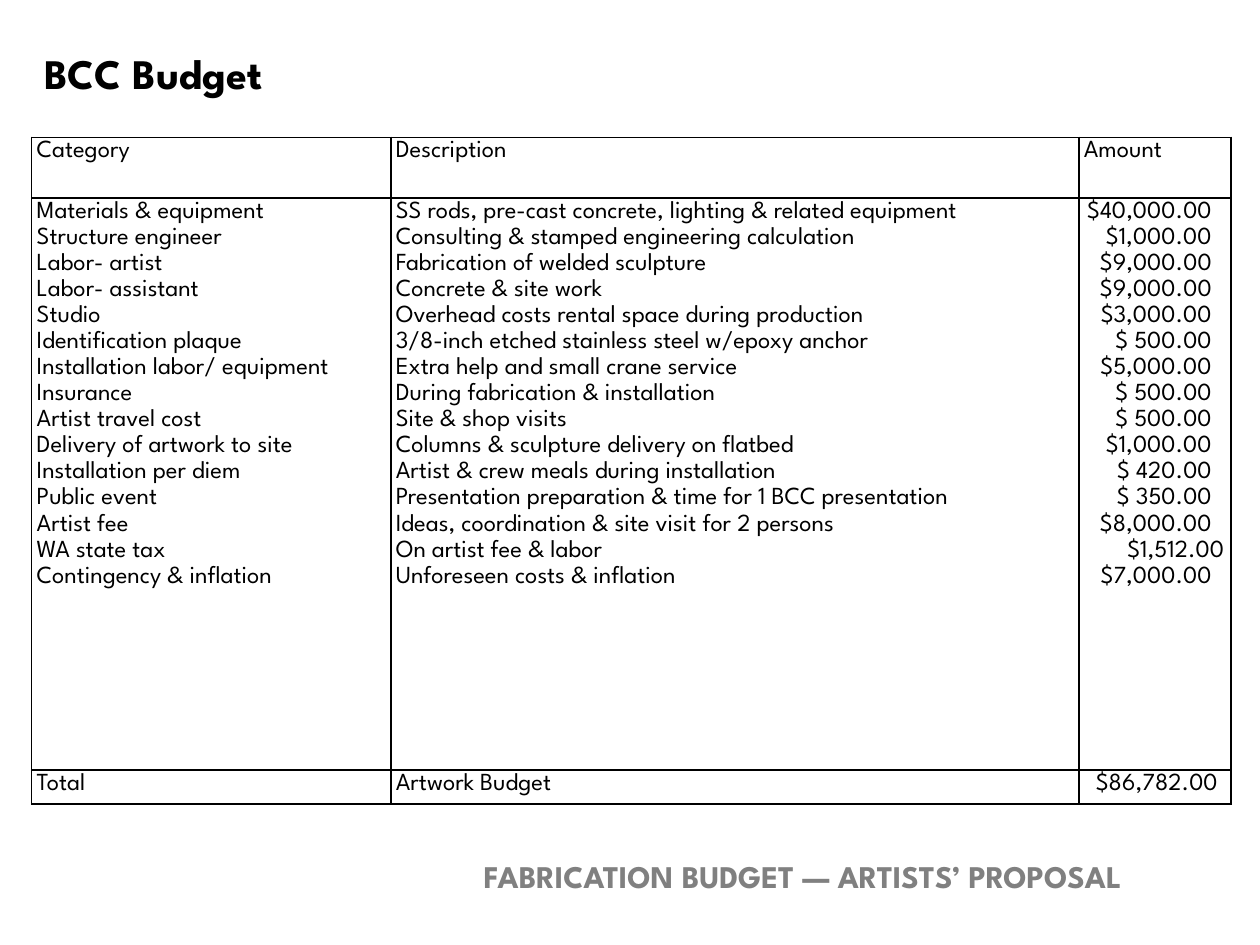
from dataclasses import dataclass

from lxml import etree
from pptx import Presentation
from pptx.dml.color import RGBColor
from pptx.enum.text import MSO_ANCHOR, MSO_AUTO_SIZE, PP_ALIGN
from pptx.oxml.ns import qn
from pptx.util import Cm, Pt

LEFT, RIGHT = PP_ALIGN.LEFT, PP_ALIGN.RIGHT
MIDDLE, TOP = MSO_ANCHOR.MIDDLE, MSO_ANCHOR.TOP
GROW = MSO_AUTO_SIZE.SHAPE_TO_FIT_TEXT
FONT = "League Spartan"
BLACK, GRAY, WHITE = "000000", "808080", "FFFFFF"
COLUMN_WIDTHS = (7.24, 13.87, 3.07)
ROW_HEIGHTS = (1.22, 11.53, 0.69)
CELL_MARGIN = 0.1


@dataclass
class Item:
    category: str
    description: str
    amount: str
    amount_end: float = 2.58


@dataclass
class Label:
    text: str
    left: float
    top: float
    width: float
    height: float
    size: int
    color: str
    align: PP_ALIGN = LEFT
    anchor: MSO_ANCHOR = TOP
    wrap: bool = True


HEADER = [Item("Category", "Description", "Amount", 0)]
ITEMS = [
    Item("Materials & equipment", "SS rods, pre-cast concrete, lighting & related equipment", "$40,000.00"),
    Item("Structure engineer", "Consulting & stamped engineering calculation", "$1,000.00"),
    Item("Labor- artist", "Fabrication of welded sculpture", "$9,000.00"),
    Item("Labor- assistant", "Concrete & site work", "$9,000.00"),
    Item("Studio", "Overhead costs rental space during production", "$3,000.00"),
    Item("Identification plaque", "3/8-inch etched stainless steel w/epoxy anchor", "$ 500.00"),
    Item("Installation labor/ equipment", "Extra help and small crane service", "$5,000.00"),
    Item("Insurance", "During fabrication & installation", "$ 500.00"),
    Item("Artist travel cost", "Site & shop visits", "$ 500.00"),
    Item("Delivery of artwork to site", "Columns & sculpture delivery on flatbed", "$1,000.00"),
    Item("Installation per diem", "Artist & crew meals during installation", "$ 420.00"),
    Item("Public event", "Presentation preparation & time for 1 BCC presentation", "$ 350.00"),
    Item("Artist fee", "Ideas, coordination & site visit for 2 persons", "$8,000.00"),
    Item("WA state tax", "On artist fee & labor", "$1,512.00", 2.83),
    Item("Contingency & inflation", "Unforeseen costs & inflation", "$7,000.00"),
]
TOTAL = [Item("Total", "Artwork Budget", "$86,782.00", 2.7)]

LABELS = [
    Label("BCC Budget", 0.64, 0.84, 5.77, 1.27, 24, BLACK, anchor=MIDDLE, wrap=False),
    Label("FABRICATION BUDGET — ARTISTS’ PROPOSAL", 4.45, 17.15, 18.42, 1.02, 18, GRAY, align=RIGHT),
]


def rgb(color: str) -> RGBColor:
    return RGBColor.from_string(color)


def set_font(paragraph, size: int, color: str, bold: bool = False) -> None:
    font = paragraph.font
    font.name = FONT
    font.size = Pt(size)
    font.bold = bold
    font.color.rgb = rgb(color)


def add_right_tab(paragraph, position: float) -> None:
    properties = paragraph._p.get_or_add_pPr()
    tabs = etree.SubElement(properties, qn("a:tabLst"))
    etree.SubElement(tabs, qn("a:tab"), pos=str(Cm(position)), algn="r")


def add_borders(cell) -> None:
    properties = cell._tc.get_or_add_tcPr()
    for side in ("lnL", "lnR", "lnT", "lnB"):
        line = etree.SubElement(properties, qn(f"a:{side}"), w=str(Pt(1)))
        fill = etree.SubElement(line, qn("a:solidFill"))
        etree.SubElement(fill, qn("a:srgbClr"), val=BLACK)


def fill_cell(cell, entries: list[tuple[str, float]]) -> None:
    add_borders(cell)
    cell.fill.solid()
    cell.fill.fore_color.rgb = rgb(WHITE)
    cell.margin_left = cell.margin_right = Cm(CELL_MARGIN)
    cell.margin_top = cell.margin_bottom = Cm(0)
    frame = cell.text_frame
    for index, (text, tab) in enumerate(entries):
        paragraph = frame.add_paragraph() if index else frame.paragraphs[0]
        if tab:
            add_right_tab(paragraph, tab)
        paragraph.text = f"\t{text}" if tab else text
        paragraph.line_spacing = 1.15
        set_font(paragraph, 14, BLACK)


def add_budget(page) -> None:
    frame = page.shapes.add_table(
        len(ROW_HEIGHTS), len(COLUMN_WIDTHS), Cm(0.64), Cm(2.77),
        Cm(sum(COLUMN_WIDTHS)), Cm(sum(ROW_HEIGHTS)),
    )
    table = frame.table
    table.first_row = table.horz_banding = False
    for column, width in zip(table.columns, COLUMN_WIDTHS):
        column.width = Cm(width)
    for row, height, items in zip(table.rows, ROW_HEIGHTS, (HEADER, ITEMS, TOTAL)):
        row.height = Cm(height)
        category, description, amount = row.cells
        fill_cell(category, [(item.category, 0) for item in items])
        fill_cell(description, [(item.description, 0) for item in items])
        fill_cell(amount, [(item.amount, item.amount_end) for item in items])


def add_label(page, label: Label) -> None:
    box = page.shapes.add_textbox(Cm(label.left), Cm(label.top), Cm(label.width), Cm(label.height))
    frame = box.text_frame
    frame.word_wrap = label.wrap
    frame.auto_size = GROW
    frame.vertical_anchor = label.anchor
    paragraph = frame.paragraphs[0]
    paragraph.text = label.text
    paragraph.alignment = label.align
    set_font(paragraph, label.size, label.color, bold=True)


def main() -> None:
    deck = Presentation()
    deck.slide_width, deck.slide_height = Cm(25.4), Cm(19.05)
    page = deck.slides.add_slide(deck.slide_layouts[6])
    add_budget(page)
    for label in LABELS:
        add_label(page, label)
    deck.save("out.pptx")


if __name__ == "__main__":
    main()
